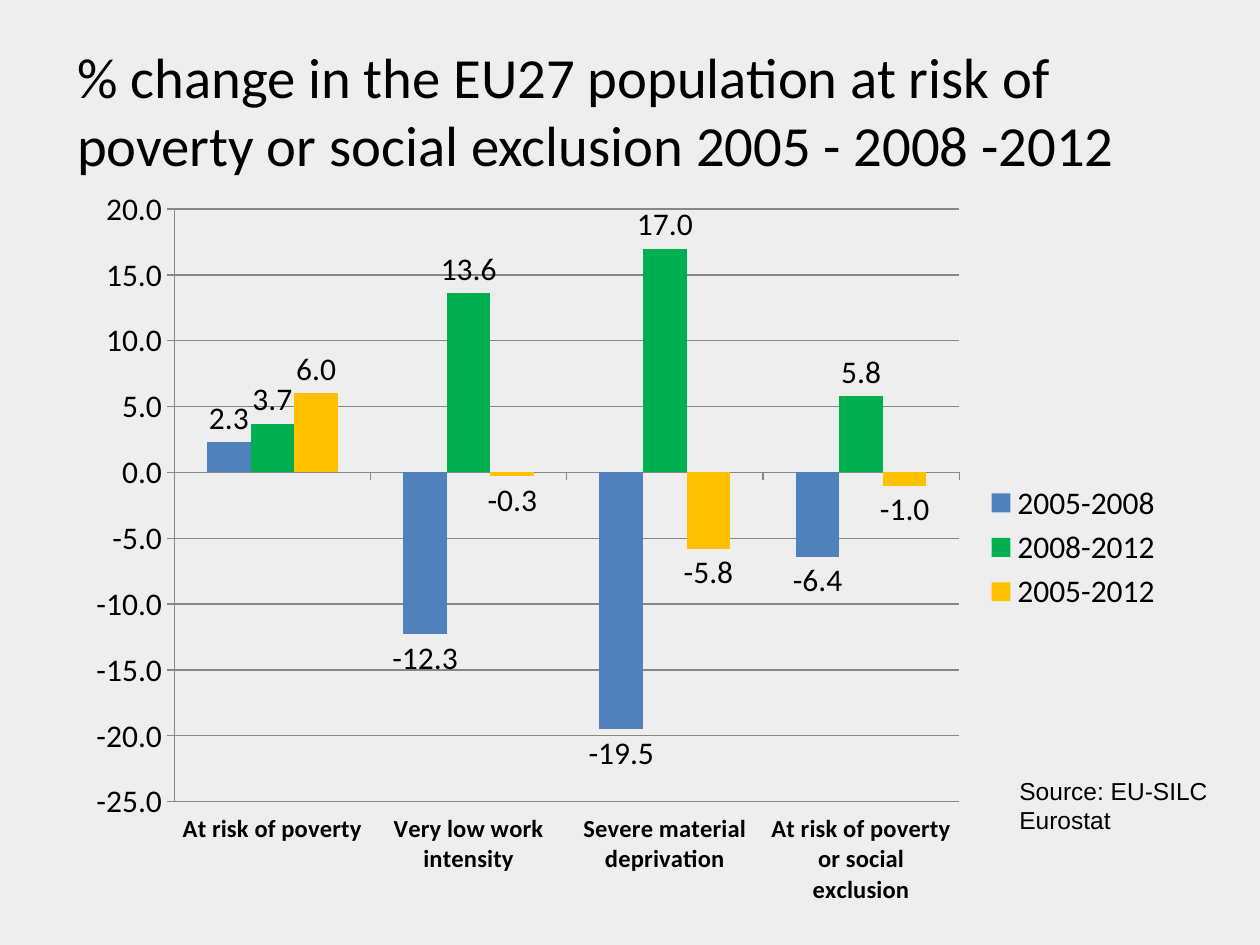
from dataclasses import dataclass

from pptx import Presentation
from pptx.chart.data import CategoryChartData
from pptx.dml.color import RGBColor
from pptx.enum.chart import (XL_CHART_TYPE, XL_LABEL_POSITION, XL_LEGEND_POSITION,
                             XL_TICK_LABEL_POSITION, XL_TICK_MARK)
from pptx.enum.text import MSO_ANCHOR, MSO_AUTO_SIZE, PP_ALIGN
from pptx.util import Cm, Pt

COLUMNS = XL_CHART_TYPE.COLUMN_CLUSTERED
OUTSIDE_END = XL_LABEL_POSITION.OUTSIDE_END
LEGEND_RIGHT = XL_LEGEND_POSITION.RIGHT
LABELS_LOW = XL_TICK_LABEL_POSITION.LOW
TICK_OUTSIDE = XL_TICK_MARK.OUTSIDE
TICK_NONE = XL_TICK_MARK.NONE
ANCHOR_BOTTOM = MSO_ANCHOR.BOTTOM
FIT_SHAPE = MSO_AUTO_SIZE.SHAPE_TO_FIT_TEXT
NO_FIT = MSO_AUTO_SIZE.NONE
LEFT = PP_ALIGN.LEFT
TITLE_ONLY = 5


@dataclass(frozen=True)
class Theme:
    """Colours, fonts and type sizes of the slide."""
    background: RGBColor = RGBColor(0xEE, 0xEE, 0xEE)
    text: RGBColor = RGBColor(0, 0, 0)
    lines: RGBColor = RGBColor(0x86, 0x86, 0x86)
    series: tuple = (RGBColor(0x4F, 0x81, 0xBD), RGBColor(0x00, 0xB0, 0x50),
                     RGBColor(0xFF, 0xC0, 0x00))
    main_font: str = "Calibri"
    source_font: str = "Arial"
    title_size: float = 32.4
    chart_size: int = 18
    small_size: int = 14


THEME = Theme()
CATEGORIES = ("At risk of poverty", "Very low work intensity",
              "Severe material deprivation", "At risk of poverty or social exclusion")
CHANGES = {
    "2005-2008": (2.3, -12.3, -19.5, -6.4),
    "2008-2012": (3.7, 13.6, 17.0, 5.8),
    "2005-2012": (6.0, -0.3, -5.8, -1.0),
}
NUMBER_FORMAT = "0.0"


def style_font(font, name, size, bold=False):
    """Set the typeface, size, weight and text colour of a font."""
    font.name, font.size, font.bold = name, Pt(size), bold
    font.color.rgb = THEME.text


def place_title(page, left, top, width, height):
    """Move the title placeholder into the box and fill it."""
    title = page.shapes.title
    title.left, title.top, title.width, title.height = left, top, width, height
    frame = title.text_frame
    frame.text = ("% change in the EU27 population at risk of poverty "
                  "or social exclusion 2005 - 2008 -2012")
    frame.vertical_anchor = ANCHOR_BOTTOM
    frame.auto_size = NO_FIT
    frame.word_wrap = True
    para = frame.paragraphs[0]
    para.alignment = LEFT
    style_font(para.runs[0].font, THEME.main_font, THEME.title_size)


def style_axes(chart):
    """Format the category and value axes with their gridlines."""
    category, value = chart.category_axis, chart.value_axis
    category.tick_label_position = LABELS_LOW
    style_font(category.tick_labels.font, THEME.main_font, THEME.small_size, bold=True)
    value.minimum_scale, value.maximum_scale, value.major_unit = -25, 20, 5
    value.has_major_gridlines = True
    value.tick_labels.number_format = NUMBER_FORMAT
    value.tick_labels.number_format_is_linked = False
    for axis in (category, value):
        axis.major_tick_mark = TICK_OUTSIDE
        axis.minor_tick_mark = TICK_NONE
    for part in (category, value, value.major_gridlines):
        part.format.line.color.rgb = THEME.lines
        part.format.line.width = Pt(0.75)


def style_series(plot):
    """Colour each series and show its values."""
    plot.gap_width, plot.overlap = 150, 0
    plot.vary_by_categories = False
    for series, color in zip(plot.series, THEME.series):
        series.invert_if_negative = False
        series.format.fill.solid()
        series.format.fill.fore_color.rgb = color
        labels = series.data_labels
        labels.show_value = True
        labels.position = OUTSIDE_END
        labels.number_format = NUMBER_FORMAT
        labels.number_format_is_linked = False
        style_font(labels.font, THEME.main_font, THEME.chart_size)


def place_chart(page, left, top, width, height):
    """Draw the clustered columns of population changes in the box."""
    data = CategoryChartData(number_format=NUMBER_FORMAT)
    data.categories = CATEGORIES
    for name, values in CHANGES.items():
        data.add_series(name, values)
    chart = page.shapes.add_chart(COLUMNS, left, top, width, height, data).chart
    style_font(chart.font, THEME.main_font, THEME.chart_size)
    chart.has_title = False
    chart.has_legend = True
    chart.legend.position = LEGEND_RIGHT
    chart.legend.include_in_layout = False
    style_axes(chart)
    style_series(chart.plots[0])


def place_source(page, left, top, width, height):
    """Write the data source in the box."""
    frame = page.shapes.add_textbox(left, top, width, height).text_frame
    frame.word_wrap = True
    frame.auto_size = FIT_SHAPE
    frame.text = "Source: EU-SILC Eurostat"
    style_font(frame.paragraphs[0].runs[0].font, THEME.source_font, THEME.small_size)


def main():
    """Build the slide and save the deck."""
    deck = Presentation()
    deck.slide_width, deck.slide_height = Cm(25.4), Cm(19.05)
    page = deck.slides.add_slide(deck.slide_layouts[TITLE_ONLY])
    page.background.fill.solid()
    page.background.fill.fore_color.rgb = THEME.background
    place_title(page, Cm(1.3), Cm(0.53), Cm(22.86), Cm(3.18))
    place_chart(page, Cm(1.5), Cm(3.53), Cm(22.2), Cm(15.01))
    place_source(page, Cm(20.3), Cm(15.52), Cm(4.39), Cm(1.45))
    deck.save("out.pptx")


if __name__ == "__main__":
    main()
